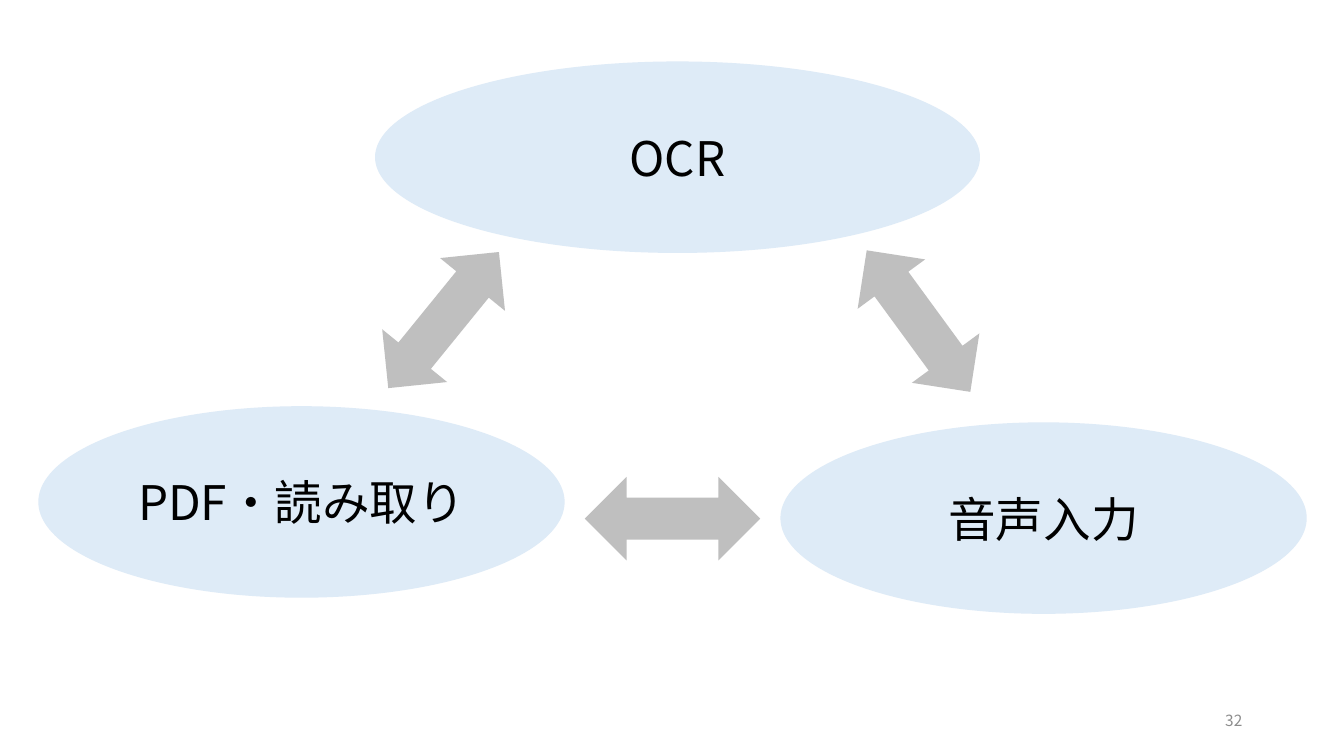
from lxml.etree import SubElement
from pptx import Presentation
from pptx.dml.color import RGBColor
from pptx.enum.shapes import MSO_SHAPE as Preset
from pptx.enum.text import MSO_ANCHOR as Anchor, PP_ALIGN as Align
from pptx.oxml.ns import qn
from pptx.util import Inches, Pt

FONT = "Noto Sans CJK JP"
ARROW_SIZE = (1.74, 0.83)
TOPICS = [
    ("OCR", (3.72, 0.61, 6, 1.9)),
    ("PDF・読み取り", (0.38, 4.03, 5.22, 1.9)),
    ("音声入力", (7.74, 4.19, 5.22, 1.9)),
]
ARROWS = [(3.53, 2.76, 309.1), (8.24, 2.77, 233.8), (5.8, 4.73, 180)]


def color(value):
    """Turn a hex string into a colour."""
    return RGBColor.from_string(value)


def write_text(shape, text, size, ink, align):
    """Write one vertically centred line of text into a shape."""
    frame = shape.text_frame
    frame.word_wrap = True
    frame.vertical_anchor = Anchor.MIDDLE
    para = frame.paragraphs[0]
    para.alignment = align
    span = para.add_run()
    span.text = text
    for name, value in {"size": Pt(size), "name": FONT}.items():
        setattr(span.font, name, value)
    span.font.color.rgb = color(ink)
    SubElement(span.font._element, qn("a:ea"), typeface=FONT)


def add_flat_shape(page, preset, box, fill):
    """Add a preset shape with a plain fill and neither line nor shadow."""
    shape = page.shapes.add_shape(preset, *map(Inches, box))
    shape.shadow.inherit = False
    shape.fill.solid()
    shape.fill.fore_color.rgb = color(fill)
    shape.line.fill.background()
    return shape


def add_topic(page, text, box):
    """Add a pale blue ellipse with its label."""
    ellipse = add_flat_shape(page, Preset.OVAL, box, "DEEBF7")
    write_text(ellipse, text, 34, "000000", Align.CENTER)


def add_arrow(page, left, top, angle):
    """Add a grey double arrow turned by an angle."""
    box = (left, top, *ARROW_SIZE)
    arrow = add_flat_shape(page, Preset.LEFT_RIGHT_ARROW, box, "BFBFBF")
    arrow.rotation = angle


def add_page_number(page, number, box):
    """Add the right-aligned page number."""
    label = page.shapes.add_textbox(*map(Inches, box))
    write_text(label, number, 11, "8C8C8C", Align.RIGHT)


def build_cycle(page):
    """Place the three topics, the arrows between them and the page number."""
    for text, box in TOPICS:
        add_topic(page, text, box)
    for left, top, angle in ARROWS:
        add_arrow(page, left, top, angle)
    add_page_number(page, "32", (9.42, 6.95, 3, 0.4))


def main():
    """Build and save the deck."""
    deck = Presentation()
    deck.slide_width, deck.slide_height = Inches(13.33), Inches(7.5)
    build_cycle(deck.slides.add_slide(deck.slide_layouts[6]))
    deck.save("out.pptx")


if __name__ == "__main__":
    main()
